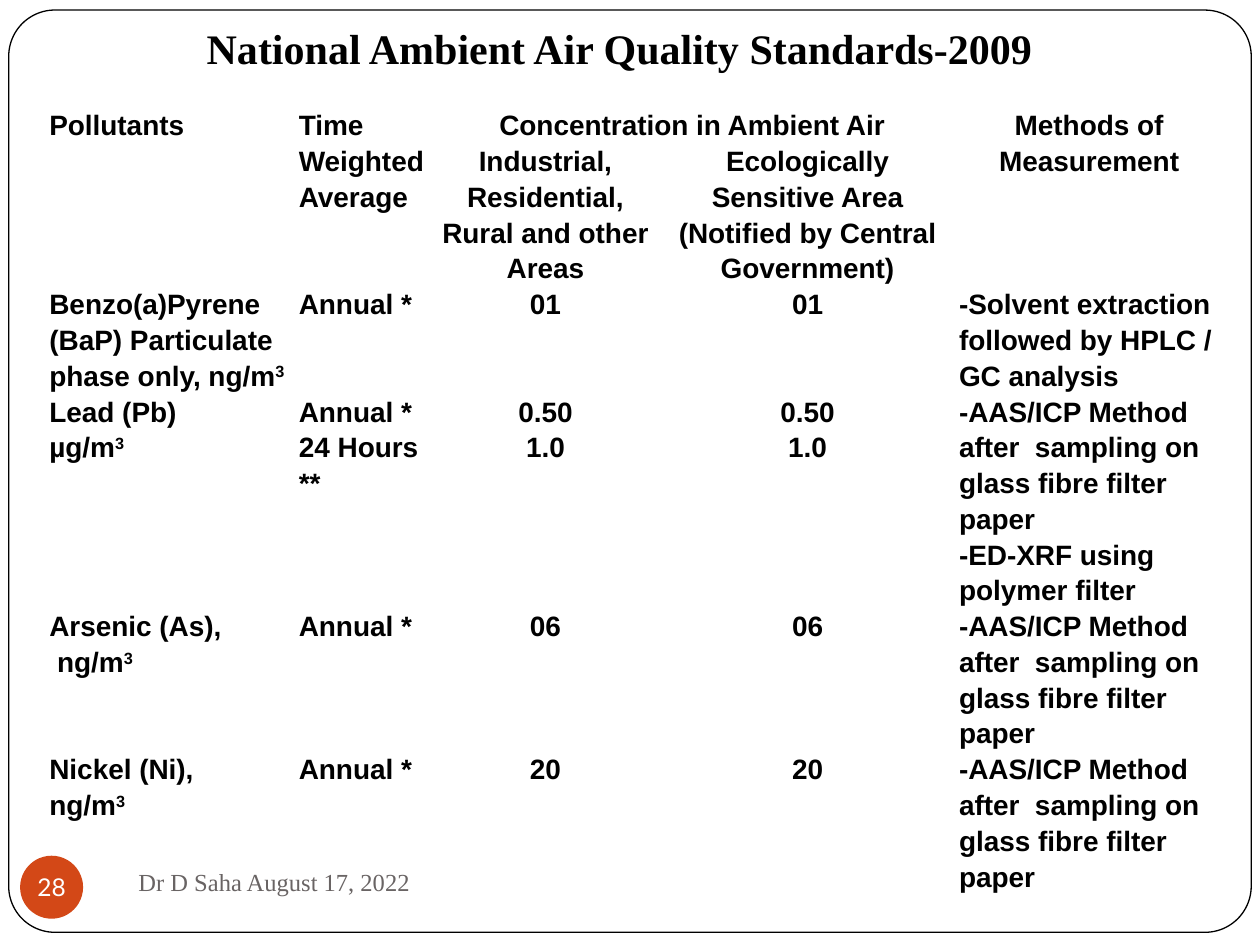
from lxml import etree
from pptx import Presentation
from pptx.dml.color import RGBColor
from pptx.enum.shapes import MSO_SHAPE
from pptx.enum.text import MSO_ANCHOR, MSO_AUTO_SIZE, PP_ALIGN
from pptx.oxml.ns import qn
from pptx.util import Pt

LEFT, CENTER = PP_ALIGN.LEFT, PP_ALIGN.CENTER
TOP, MIDDLE = MSO_ANCHOR.TOP, MSO_ANCHOR.MIDDLE
NO_AUTOFIT = MSO_AUTO_SIZE.NONE
ROUNDED, OVAL = MSO_SHAPE.ROUNDED_RECTANGLE, MSO_SHAPE.OVAL

COLORS = {"paper": "FFFFFF", "ink": "000000", "badge": "D34817", "footer": "696464"}
SERIF, SANS, BADGE_FONT = "Times New Roman", "Arial", "Lato"
PLAIN_TABLE_STYLE = "{2D5ABB26-0587-4C30-8999-92F81FD0307C}"

COLUMN_WIDTHS = [142.56, 77.76, 131.76, 167.76, 154.08]
ROW_HEIGHTS = [19.5, 54.7, 61.2, 102.2, 61.2, 61.2]
COLUMN_ALIGNMENTS = [LEFT, LEFT, CENTER, CENTER, LEFT]
FILTER_METHOD = "-AAS/ICP Method after  sampling on glass fibre filter paper"
HEADERS = {
    (0, 0): ("Pollutants", LEFT),
    (0, 1): ("Time Weighted\nAverage", LEFT),
    (0, 2): ("Concentration in Ambient Air", CENTER),
    (0, 4): ("Methods of Measurement", CENTER),
    (1, 2): ("Industrial, Residential, Rural and other Areas", CENTER),
    (1, 3): ("Ecologically Sensitive Area (Notified by Central Government)", CENTER),
}
STANDARDS = [
    ("Benzo(a)Pyrene (BaP) Particulate phase only, ng/m^3", "Annual *", "01", "01",
     "-Solvent extraction followed by HPLC / GC analysis"),
    ("Lead (Pb)\nµg/m^3", "Annual *\n24 Hours **", "0.50\n1.0", "0.50\n1.0",
     FILTER_METHOD + "\n-ED-XRF using polymer filter"),
    ("Arsenic (As),\n ng/m^3", "Annual *", "06", "06", FILTER_METHOD),
    ("Nickel (Ni),\nng/m^3", "Annual *", "20", "20", FILTER_METHOD),
]


def rgb(name):
    """Return the named palette colour."""
    return RGBColor.from_string(COLORS[name])


def write_text(frame, text, font=SANS, size=16, color="ink", bold=False,
               align=LEFT, spacing=1.0):
    """Write one paragraph per line; text after a caret is superscript."""
    for index, line in enumerate(text.split("\n")):
        paragraph = frame.add_paragraph() if index else frame.paragraphs[0]
        paragraph.alignment = align
        paragraph.line_spacing = spacing
        for part, content in enumerate(line.split("^")):
            run = paragraph.add_run()
            run.text = content
            run.font.name = font
            run.font.size = Pt(size)
            run.font.bold = bold
            run.font.color.rgb = rgb(color)
            if part:
                run._r.get_or_add_rPr().set("baseline", "30000")


def set_frame(frame, anchor, horizontal=7.2, vertical=3.6):
    """Set wrapping, anchor and margins of a text frame."""
    frame.word_wrap = True
    frame.auto_size = NO_AUTOFIT
    frame.vertical_anchor = anchor
    frame.margin_left = frame.margin_right = Pt(horizontal)
    frame.margin_top = frame.margin_bottom = Pt(vertical)


def add_border(slide, box):
    """Place the rounded page border behind the title."""
    border = slide.shapes.add_shape(ROUNDED, *map(Pt, box))
    border.adjustments[0] = 0.05
    border.shadow.inherit = False
    border.fill.solid()
    border.fill.fore_color.rgb = rgb("paper")
    border.line.color.rgb = rgb("ink")
    border.line.width = Pt(0.75)
    slide.shapes.title.element.addprevious(border.element)


def set_title(slide, box, text):
    """Move and fill the title placeholder."""
    title = slide.shapes.title
    title.left, title.top, title.width, title.height = map(Pt, box)
    set_frame(title.text_frame, TOP)
    write_text(title.text_frame, text, font=SERIF, size=24, bold=True)


def add_standards_table(slide, left, top):
    """Build the pollutant table with its two-level header."""
    shape = slide.shapes.add_table(
        len(ROW_HEIGHTS), len(COLUMN_WIDTHS), Pt(left), Pt(top),
        Pt(sum(COLUMN_WIDTHS)), Pt(sum(ROW_HEIGHTS)))
    table = shape.table
    table.first_row = table.horz_banding = False
    properties = table._tbl.tblPr
    style = properties.find(qn("a:tableStyleId"))
    if style is None:
        style = etree.SubElement(properties, qn("a:tableStyleId"))
    style.text = PLAIN_TABLE_STYLE
    for column, width in zip(table.columns, COLUMN_WIDTHS):
        column.width = Pt(width)
    for row, height in zip(table.rows, ROW_HEIGHTS):
        row.height = Pt(height)
    for column in (0, 1, 4):
        table.cell(0, column).merge(table.cell(1, column))
    table.cell(0, 2).merge(table.cell(0, 3))

    entries = dict(HEADERS)
    for row, values in enumerate(STANDARDS, start=2):
        for column, value in enumerate(values):
            entries[row, column] = (value, COLUMN_ALIGNMENTS[column])
    for cell in table.iter_cells():
        cell.fill.background()
        cell.margin_left = cell.margin_right = Pt(2.7)
        cell.margin_top = cell.margin_bottom = Pt(0)
    for position, (text, align) in entries.items():
        write_text(table.cell(*position).text_frame, text, bold=True,
                   align=align, spacing=1.15)


def add_page_badge(slide, box, number):
    """Place the round page number."""
    badge = slide.shapes.add_shape(OVAL, *map(Pt, box))
    badge.shadow.inherit = False
    badge.fill.solid()
    badge.fill.fore_color.rgb = rgb("badge")
    badge.line.fill.background()
    set_frame(badge.text_frame, MIDDLE, horizontal=0, vertical=0)
    write_text(badge.text_frame, number, font=BADGE_FONT, size=14,
               color="paper", align=CENTER)


def add_footer(slide, box, text):
    """Place the author and date line."""
    footer = slide.shapes.add_textbox(*map(Pt, box))
    set_frame(footer.text_frame, MIDDLE)
    write_text(footer.text_frame, text, font=SERIF, size=14, color="footer")


def main():
    """Build and save the air quality slide."""
    presentation = Presentation()
    presentation.slide_width, presentation.slide_height = Pt(720), Pt(540)
    slide = presentation.slides.add_slide(presentation.slide_layouts[5])
    add_border(slide, (5, 5.76, 710, 527))
    set_title(slide, (110.88, 9.36, 491, 36), "National Ambient Air Quality Standards-2009")
    add_standards_table(slide, 25.5, 60.5)
    add_page_badge(slide, (11.5, 489, 36, 36), "28")
    add_footer(slide, (72, 486, 312, 36), "Dr D Saha August 17, 2022")
    presentation.save("out.pptx")


if __name__ == "__main__":
    main()
